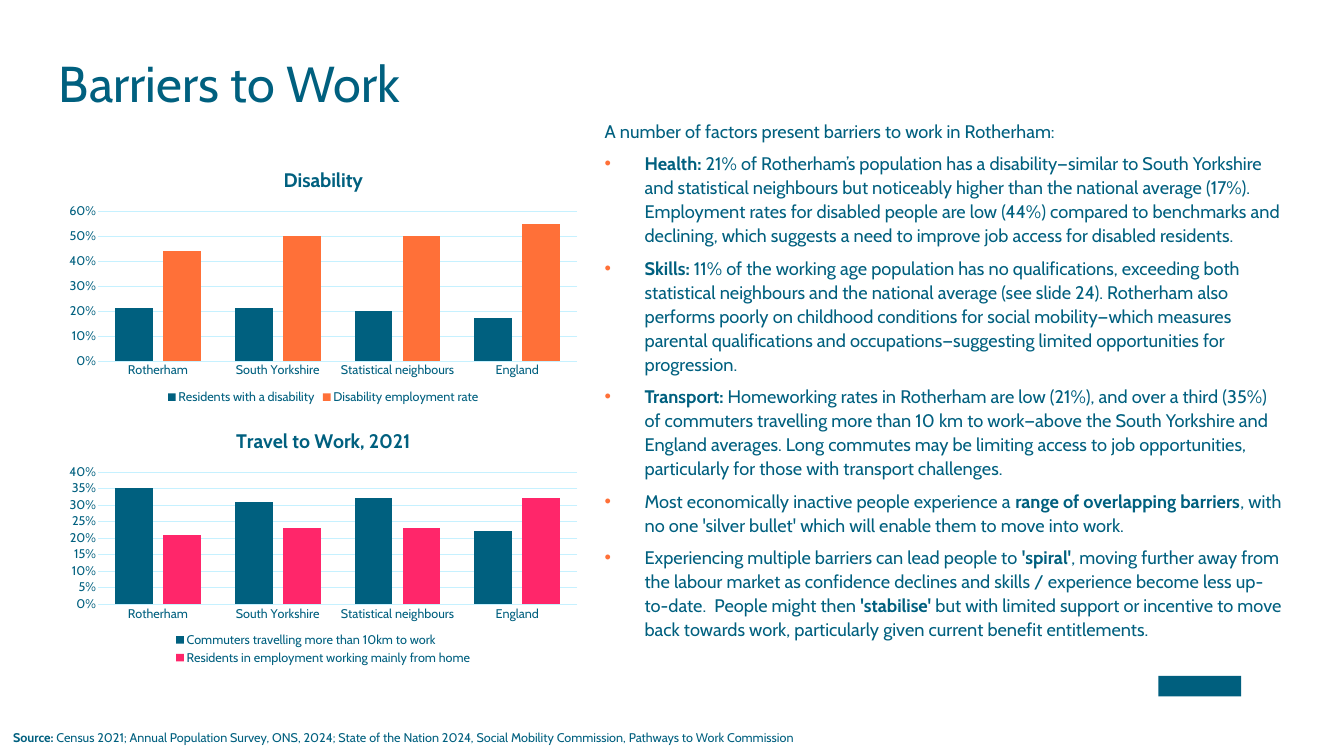
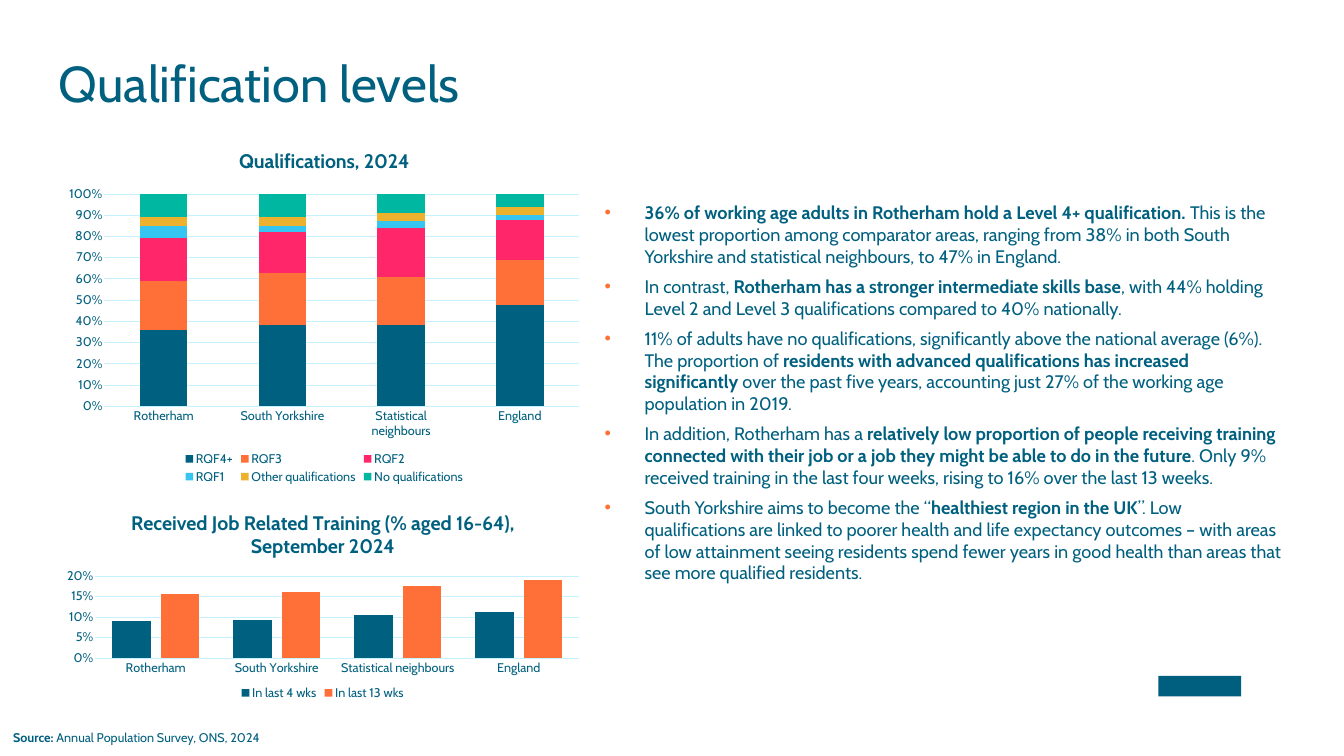
import dataclasses
import functools

import lxml.etree
import pptx
import pptx.chart.data
import pptx.dml.color
import pptx.enum.chart
import pptx.enum.shapes
import pptx.enum.text
import pptx.oxml.ns
import pptx.util

Pt = pptx.util.Pt
RGB = pptx.dml.color.RGBColor.from_string
Kind = pptx.enum.chart.XL_CHART_TYPE
Text = pptx.enum.text


@dataclasses.dataclass(frozen=True)
class Theme:
    face: str = "Cabin"
    teal: str = "00607F"
    mark: str = "005F7E"
    orange: str = "FF7038"
    pink: str = "FF266A"
    sky: str = "36C5F0"
    gold: str = "ECB22E"
    green: str = "00B7A1"
    pale: str = "C6F1FF"
    title: float = 72
    lead: float = 85
    head: float = 28
    small: float = 18
    gap: float = 12
    indent: float = 57


def put(item, **vals):
    for key, val in vals.items():
        *stem, last = key.split("__")
        setattr(functools.reduce(getattr, stem, item), last, val)


def node(root, tag, **vals):
    return lxml.etree.SubElement(root, pptx.oxml.ns.qn(tag), **vals)


def box(*sides):
    return dict(zip(("left", "top", "width", "height"), map(Pt, sides)))


class Deck:
    def __init__(self, theme):
        self.theme = theme
        self.show = pptx.Presentation()
        put(self.show, slide_width=Pt(1918.8), slide_height=Pt(1080))
        self.slide = None

    def font(self, size, bold=False):
        return dict(
            name=self.theme.face,
            size=Pt(size),
            bold=bold,
            color__rgb=RGB(self.theme.teal),
        )

    def ink(self, para, text, size):
        for spot, part in enumerate(text.split("**")):
            if part:
                run = para.add_run()
                run.text = part
                put(run.font, **self.font(size, spot % 2 == 1))

    def frame(self, shape):
        put(
            shape.text_frame,
            word_wrap=True,
            auto_size=Text.MSO_AUTO_SIZE.NONE,
            vertical_anchor=Text.MSO_ANCHOR.TOP,
            margin_left=0,
            margin_top=0,
            margin_right=0,
            margin_bottom=0,
        )
        return shape.text_frame

    def start(self, title):
        self.slide = self.show.slides.add_slide(self.show.slide_layouts[1])
        self.block()
        shape = self.slide.shapes.title
        put(shape, **box(84.2, 75.6, 1655.3, 123.8))
        para = self.frame(shape).paragraphs[0]
        put(
            para,
            alignment=Text.PP_ALIGN.LEFT,
            line_spacing=Pt(self.theme.lead),
            space_before=Pt(0),
        )
        self.ink(para, title, self.theme.title)

    def block(self):
        shape = self.slide.shapes.add_shape(
            pptx.enum.shapes.MSO_SHAPE.RECTANGLE,
            **box(1653.8, 965.5, 118.1, 29.5),
        )
        shape.shadow.inherit = False
        shape.fill.solid()
        shape.fill.fore_color.rgb = RGB(self.theme.mark)
        shape.line.fill.background()

    def body(self, top, size, lines, points, intro=None):
        shape = self.slide.placeholders[1]
        put(shape, **box(863.3, top, 972, 617.8))
        frame = self.frame(shape)
        rows = [(intro, False)] if intro else []
        rows += [(point, True) for point in points]
        for spot, (text, dot) in enumerate(rows):
            para = frame.add_paragraph() if spot else frame.paragraphs[0]
            self.bullet(para, dot)
            put(
                para,
                alignment=Text.PP_ALIGN.LEFT,
                line_spacing=lines,
                space_before=Pt(0),
                space_after=Pt(self.theme.gap),
            )
            self.ink(para, text, size)

    def bullet(self, para, dot):
        form = para._p.get_or_add_pPr()
        inset = Pt(self.theme.indent) if dot else 0
        form.set("marL", str(inset))
        form.set("indent", str(-inset))
        if dot:
            node(node(form, "a:buClr"), "a:srgbClr", val=self.theme.orange)
            node(form, "a:buChar", char="•")
        else:
            node(form, "a:buNone")

    def source(self, width, text):
        shape = self.slide.shapes.add_textbox(**box(11.5, 1039.7, width, 28.8))
        put(
            shape.text_frame,
            word_wrap=True,
            auto_size=Text.MSO_AUTO_SIZE.SHAPE_TO_FIT_TEXT,
        )
        para = shape.text_frame.paragraphs[0]
        self.ink(para, "**Source: **" + text, self.theme.small)

    def chart(self, title, area, plot, series, top, step,
              kind=Kind.COLUMN_CLUSTERED, gap=90, lap=-27):
        data = pptx.chart.data.CategoryChartData()
        data.categories = PLACES
        for name, vals, _ in series:
            data.add_series(name, vals)
        left, high, width, height = box(*area).values()
        chart = self.slide.shapes.add_chart(
            kind, left, high, width, height, data
        ).chart
        put(chart.font, **self.font(self.theme.small))
        put(chart, has_title=True, has_legend=True)
        self.ink(
            chart.chart_title.text_frame.paragraphs[0],
            f"**{title}**",
            self.theme.head,
        )
        put(
            chart.legend,
            position=pptx.enum.chart.XL_LEGEND_POSITION.BOTTOM,
            include_in_layout=False,
        )
        put(chart.legend.font, **self.font(self.theme.small))
        self.axes(chart, top, step)
        put(chart.plots[0], gap_width=gap, overlap=lap,
            vary_by_categories=False)
        for item, (_, _, tint) in zip(chart.plots[0].series, series):
            item.format.fill.solid()
            item.format.fill.fore_color.rgb = RGB(tint)
        self.place(chart, area, plot)

    def axes(self, chart, top, step):
        none = pptx.enum.chart.XL_TICK_MARK.NONE
        rows, cols = chart.value_axis, chart.category_axis
        for axis in (rows, cols):
            put(axis, major_tick_mark=none, minor_tick_mark=none)
            put(axis.tick_labels.font, **self.font(self.theme.small))
        put(rows, minimum_scale=0, maximum_scale=top, major_unit=step,
            has_major_gridlines=True)
        put(rows.tick_labels, number_format="0%",
            number_format_is_linked=False)
        rows.format.line.fill.background()
        for item in (rows.major_gridlines, cols):
            put(item.format.line, color__rgb=RGB(self.theme.pale),
                width=Pt(0.75))

    def place(self, chart, area, plot):
        root = chart.element.find(".//" + pptx.oxml.ns.qn("c:plotArea"))
        for old in root.findall(pptx.oxml.ns.qn("c:layout")):
            root.remove(old)
        layout = node(root, "c:layout")
        root.insert(0, layout)
        form = node(layout, "c:manualLayout")
        node(form, "c:layoutTarget", val="inner")
        for side in "xy":
            node(form, f"c:{side}Mode", val="edge")
        left, top, width, height = area
        parts = dict(
            x=(plot[0] - left) / width,
            y=(plot[1] - top) / height,
            w=plot[2] / width,
            h=plot[3] / height,
        )
        for side, part in parts.items():
            node(form, f"c:{side}", val=f"{part:.4f}")


PLACES = ["Rotherham", "South Yorkshire", "Statistical neighbours", "England"]


def work(deck):
    hue = deck.theme
    deck.start("Barriers to Work")
    deck.body(168.5, 26, 1.1, [
        "**Health: **21% of Rotherham’s population has a disability—similar to South Yorkshire and statistical neighbours but noticeably higher than the national average (17%). Employment rates for disabled people are low (44%) compared to benchmarks and declining, which suggests a need to improve job access for disabled residents.",
        "**Skills: **11% of the working age population has no qualifications, exceeding both statistical neighbours and the national average (see slide 24). Rotherham also performs poorly on childhood conditions for social mobility—which measures parental qualifications and occupations—suggesting limited opportunities for progression.",
        "**Transport:** Homeworking rates in Rotherham are low (21%), and over a third (35%) of commuters travelling more than 10 km to work—above the South Yorkshire and England averages. Long commutes may be limiting access to job opportunities, particularly for those with transport challenges.",
        "Most economically inactive people experience a **range of overlapping barriers**, with no one 'silver bullet' which will enable them to move into work.",
        "Experiencing multiple barriers can lead people to **'spiral'**, moving further away from the labour market as confidence declines and skills / experience become less up-to-date.  People might then **'stabilise' **but with limited support or incentive to move back towards work, particularly given current benefit entitlements.",
    ], "A number of factors present barriers to work in Rotherham:")
    deck.chart("Travel to Work, 2021", (83.5, 594, 756, 360),
               (140, 674, 684, 189), [
        ("Commuters travelling more than 10km to work",
         (0.35, 0.31, 0.32, 0.22), hue.teal),
        ("Residents in employment working mainly from home",
         (0.21, 0.23, 0.23, 0.32), hue.pink),
    ], 0.4, 0.05)
    deck.chart("Disability", (83.5, 221.8, 756, 360),
               (140, 301.5, 684, 214), [
        ("Residents with a disability", (0.21, 0.21, 0.2, 0.17), hue.teal),
        ("Disability employment rate", (0.44, 0.5, 0.5, 0.55), hue.orange),
    ], 0.6, 0.1)
    deck.source(1208.9, "Census 2021; Annual Population Survey, ONS, 2024; State of the Nation 2024, Social Mobility Commission, Pathways to Work Commission")


def skills(deck):
    hue = deck.theme
    deck.start("Qualification levels")
    deck.body(288, 25.9, 1.0, [
        "**36% of working age adults in Rotherham hold a Level 4+ qualification. **This is the lowest proportion among comparator areas, ranging from 38% in both South Yorkshire and statistical neighbours, to 47% in England.",
        "In contrast, **Rotherham has a stronger intermediate skills base**, with 44% holding Level 2 and Level 3 qualifications compared to 40% nationally.",
        "11% of adults have no qualifications, significantly above the national average (6%). The proportion of **residents with advanced qualifications has increased significantly **over the past five years, accounting just 27% of the working age population in 2019.",
        "In addition, Rotherham has a **relatively low proportion of people receiving training connected with their job or a job they might be able to do in the future**. Only 9% received training in the last four weeks, rising to 16% over the last 13 weeks.",
        "South Yorkshire aims to become the “**healthiest region in the UK**”. Low qualifications are linked to poorer health and life expectancy outcomes – with areas of low attainment seeing residents spend fewer years in good health than areas that see more qualified residents.",
    ])
    deck.chart("Qualifications, 2024", (83.5, 190.8, 758.9, 504.7),
               (149, 277, 678, 303), [
        ("RQF4+", (36, 38, 38, 47), hue.teal),
        ("RQF3", (23, 24, 23, 21), hue.orange),
        ("RQF2", (20, 19, 23, 19), hue.pink),
        ("RQF1", (6, 3, 3, 2), hue.sky),
        ("Other qualifications", (4, 4, 4, 4), hue.gold),
        ("No qualifications", (11, 11, 9, 6), hue.green),
    ], 1, 0.1, Kind.COLUMN_STACKED_100, 150, 100)
    deck.source(959, "Annual Population Survey, ONS, 2024")
    deck.chart("Received Job Related Training (% aged 16-64), September 2024",
               (79.9, 712.1, 761.8, 292.3), (136, 823, 691, 117), [
        ("In last 4 wks", (0.09, 0.093, 0.106, 0.113), hue.teal),
        ("In last 13 wks", (0.157, 0.16, 0.176, 0.19), hue.orange),
    ], 0.2, 0.05)


def main():
    deck = Deck(Theme())
    work(deck)
    skills(deck)
    deck.show.save("out.pptx")


if __name__ == "__main__":
    main()
